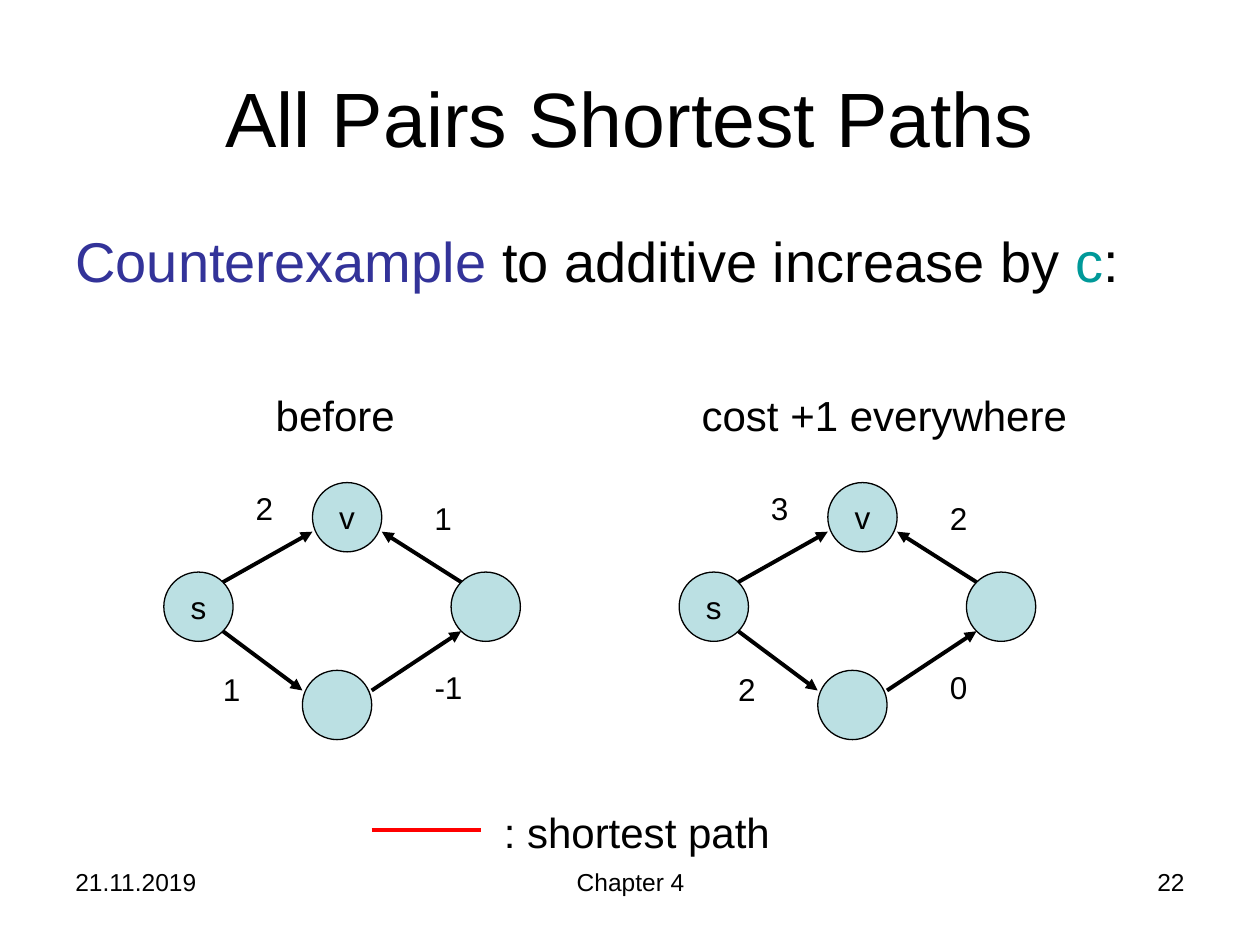
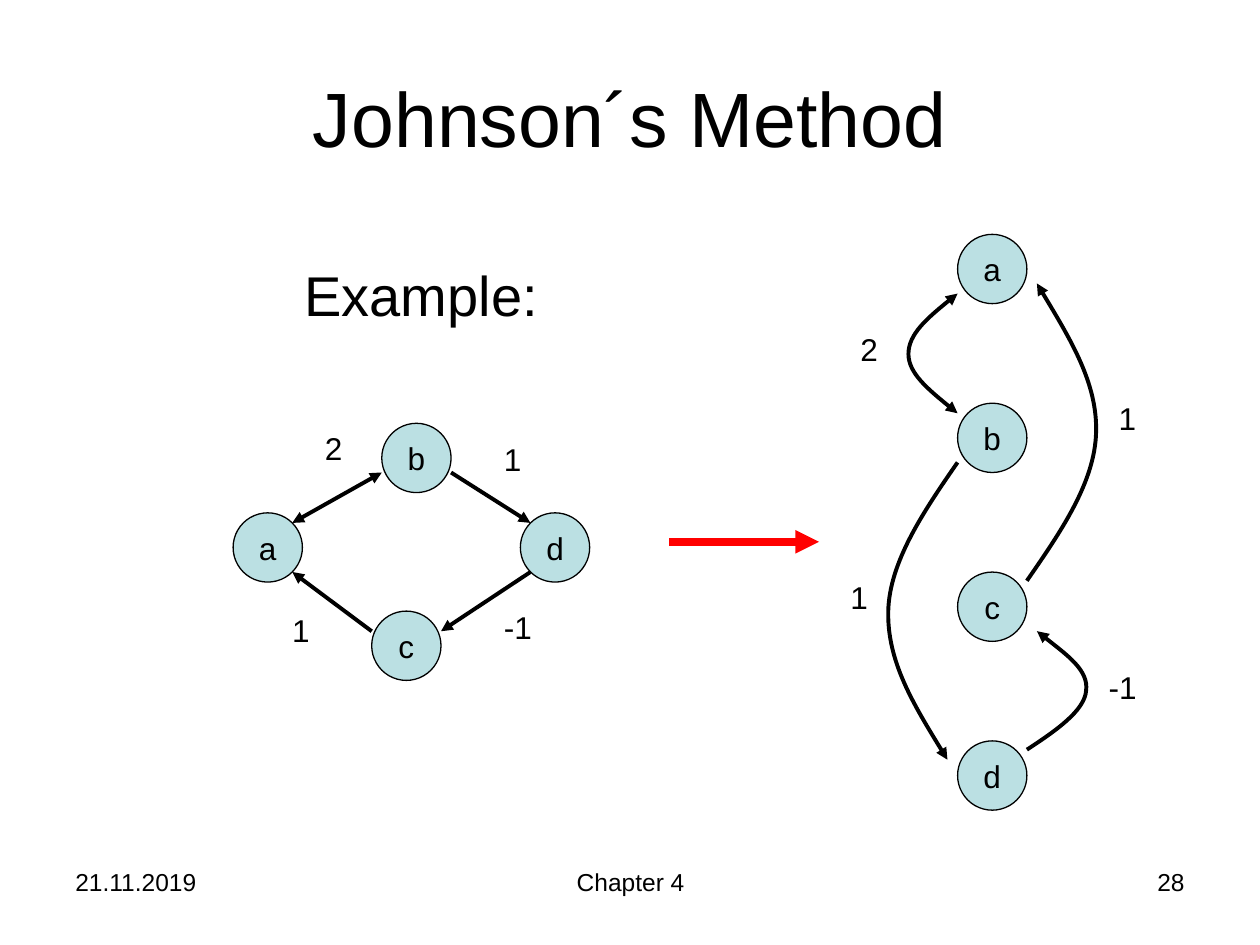
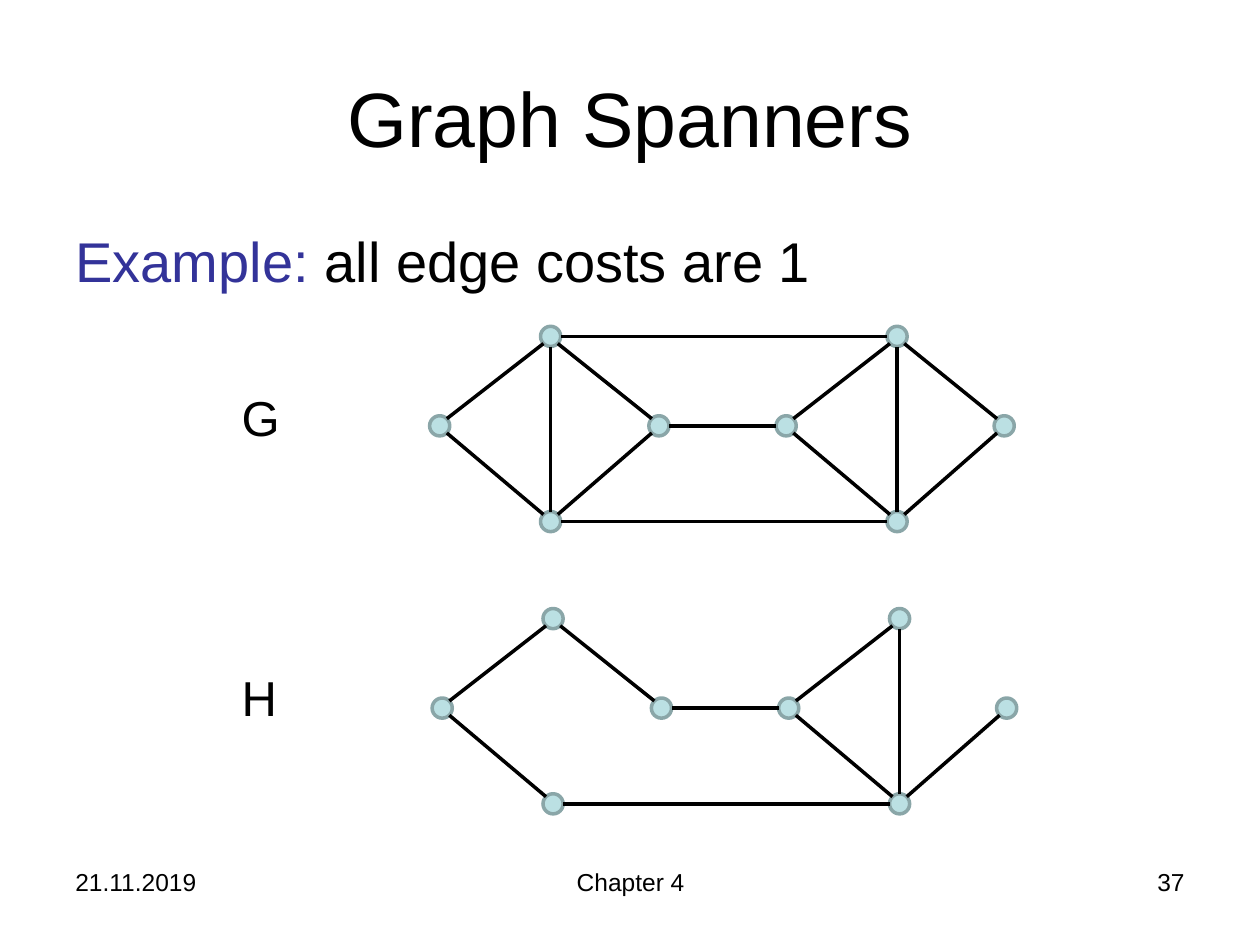
from pptx import Presentation
from pptx.dml.color import RGBColor
from pptx.enum.shapes import MSO_CONNECTOR, MSO_SHAPE
from pptx.enum.text import MSO_ANCHOR, PP_ALIGN
from pptx.oxml.ns import qn
from pptx.oxml.xmlchemy import OxmlElement
from pptx.util import Inches, Pt

# Shared style
FONT = "Arial"
BLACK, RED, INDIGO, TEAL = "000000", "FF0000", "333399", "009999"
NODE_FILL, DOT_LINE = "BBE0E3", "8AA6A8"
NODE = 0.55
DOT = 0.16


def rgb(hex_color):
    return RGBColor.from_string(hex_color)


def style_runs(p, size, colors=(BLACK,), align=None):
    p.alignment = align
    for r, color in zip(p.runs, colors):
        r.font.name, r.font.size = FONT, Pt(size)
        r.font.color.rgb = rgb(color)


def add_text(s, x, y, w, h, parts, size, align=None, wrap=False):
    """Text box with one paragraph made of (text, colour) parts."""
    tf = s.shapes.add_textbox(*map(Inches, (x, y, w, h))).text_frame
    tf.word_wrap = wrap
    p = tf.paragraphs[0]
    for text, _ in parts:
        p.add_run().text = text
    style_runs(p, size, [color for _, color in parts], align)


def add_label(s, x, y, text):
    add_text(s, x, y, 0.42 if len(text) > 1 else 0.34, 0.4, [(text, BLACK)], 18)


def add_circle(s, x, y, size, line_color, line_width, text=""):
    sp = s.shapes.add_shape(MSO_SHAPE.OVAL, *map(Inches, (x, y, size, size)))
    sp.shadow.inherit = False
    sp.fill.solid()
    sp.fill.fore_color.rgb = rgb(NODE_FILL)
    sp.line.color.rgb = rgb(line_color)
    sp.line.width = Pt(line_width)
    if text:
        tf = sp.text_frame
        tf.text = text
        tf.word_wrap = False
        tf.vertical_anchor = MSO_ANCHOR.MIDDLE
        style_runs(tf.paragraphs[0], 18, align=PP_ALIGN.CENTER)


def add_node(s, x, y, text):
    add_circle(s, x, y, NODE, BLACK, 0.75, text)


def style_line(sp, color, width, arrows):
    """arrows: '<' puts a head at the start, '>' one at the end."""
    sp.line.color.rgb = rgb(color)
    sp.line.width = Pt(width)
    ln = sp.element.spPr.find(qn("a:ln"))
    for mark, tag in (("<", "a:headEnd"), (">", "a:tailEnd")):
        if mark in arrows:
            end = OxmlElement(tag)
            end.set("type", "triangle")
            ln.append(end)


def add_line(s, start, end, color=BLACK, width=2.25, arrows=""):
    line = s.shapes.add_connector(MSO_CONNECTOR.STRAIGHT, *map(Inches, (*start, *end)))
    style_line(line, color, width, arrows)
    line.element.spPr.append(OxmlElement("a:effectLst"))


def add_curve(s, points, arrows):
    """Bézier curve: a start point, then three points for each segment."""
    emu = [(Inches(x), Inches(y)) for x, y in points]
    builder = s.shapes.build_freeform(*emu[0])
    builder.add_line_segments(emu[1:], close=False)
    sp = builder.convert_to_shape()
    sp.shadow.inherit = False
    sp.fill.background()
    style_line(sp, BLACK, 2.25, arrows)
    # Turn each three straight segments into one cubic segment
    path = sp.element.spPr.find(".//" + qn("a:path"))
    lines = path.findall(qn("a:lnTo"))
    for i in range(0, len(lines), 3):
        cubic = OxmlElement("a:cubicBezTo")
        for line in lines[i:i + 3]:
            cubic.append(line[0])
            path.remove(line)
        path.append(cubic)


def new_slide(prs, title, number):
    s = prs.slides.add_slide(prs.slide_layouts[5])
    sp = s.shapes.title
    sp.left, sp.top, sp.width, sp.height = map(Inches, (0.5, 0.3, 9, 1.25))
    tf = sp.text_frame
    tf.text = title
    tf.vertical_anchor = MSO_ANCHOR.MIDDLE
    style_runs(tf.paragraphs[0], 44, align=PP_ALIGN.CENTER)
    # Footer
    for x, w, text, align in ((0.5, 2.33, "21.11.2019", PP_ALIGN.LEFT),
                              (3.42, 3.17, "Chapter 4", PP_ALIGN.CENTER),
                              (7.17, 2.33, str(number), PP_ALIGN.RIGHT)):
        add_text(s, x, 6.83, w, 0.52, [(text, BLACK)], 14, align, wrap=True)
    return s


def add_body(s, parts):
    add_text(s, 0.5, 1.75, 9, 4.95, parts, 32, wrap=True)


# Four-node graph; nodes and edges are relative to its top left corner
DIAMOND_NODES = [(0, 0.71), (1.18, 0), (2.28, 0.71), (1.1, 1.49)]
DIAMOND_EDGES = [  # start, end, cost label
    ((0.47, 0.79), (1.18, 0.39), (0.63, 0)),
    ((0.47, 1.18), (1.1, 1.65), (0.37, 1.44)),
    ((1.65, 1.65), (2.36, 1.18), (2.05, 1.42)),
    ((2.36, 0.79), (1.73, 0.39), (2.05, 0.08)),
]


def add_diamond(s, x, y, names, costs, arrows):
    def at(point):
        return x + point[0], y + point[1]

    for point, name in zip(DIAMOND_NODES, names):
        add_node(s, *at(point), name)
    for (start, end, label), cost, arrow in zip(DIAMOND_EDGES, costs, arrows):
        add_line(s, at(start), at(end), arrows=arrow)
        add_label(s, *at(label), cost)


# Spanner graph; dot centres are relative to the first dot's column and top row
DOTS = [(0, 0.71), (0.88, 0), (0.88, 1.47), (1.74, 0.71),
        (2.75, 0.71), (3.63, 0), (3.63, 1.47), (4.48, 0.71)]
SPANNER_EDGES = [(1, 0), (3, 1), (2, 0), (4, 3), (5, 4), (6, 4), (5, 6), (7, 6), (6, 2)]
G_EDGES = SPANNER_EDGES + [(3, 2), (1, 2), (7, 5), (5, 1)]


def sign(value):
    return (value > 0) - (value < 0)


def add_dot_graph(s, x, y, edges):
    r = DOT / 2
    centres = [(x + dx, y + dy) for dx, dy in DOTS]
    for cx, cy in centres:
        add_circle(s, cx - r, cy - r, DOT, DOT_LINE, 2)
    for i, j in edges:
        (x1, y1), (x2, y2) = centres[i], centres[j]
        sx, sy = sign(x2 - x1), sign(y2 - y1)
        reach = r * (0.71 if sx and sy else 1)  # edges meet the rim of the dots
        add_line(s, (x1 + sx * reach, y1 + sy * reach),
                 (x2 - sx * reach, y2 - sy * reach), width=2)


# Nodes in a column, joined by curves
COLUMN_CURVES = [  # points, arrows, cost, label; relative to the first node
    ([(0, 1.42), (-0.2, 1.26), (-0.39, 1.1), (-0.39, 0.95),
      (-0.39, 0.79), (-0.2, 0.63), (0, 0.47)], "<>", "2", (-0.87, 0.71)),
    ([(0, 1.81), (-0.27, 2.2), (-0.54, 2.6), (-0.55, 2.99),
      (-0.56, 3.39), (-0.32, 3.78), (-0.08, 4.17)], ">", "1", (-0.95, 2.68)),
    ([(0.55, 4.09), (0.78, 3.94), (1.01, 3.78), (1.02, 3.62),
      (1.04, 3.46), (0.83, 3.31), (0.63, 3.15)], ">", "-1", (1.1, 3.39)),
    ([(0.55, 2.75), (0.82, 2.36), (1.09, 1.97), (1.1, 1.57),
      (1.11, 1.18), (0.87, 0.79), (0.63, 0.39)], ">", "1", (1.18, 1.26)),
]


def add_column(s, x, y, names, step=1.34):
    for i, name in enumerate(names):
        add_node(s, x, y + i * step, name)
    for points, arrows, cost, (dx, dy) in COLUMN_CURVES:
        add_curve(s, [(x + px, y + py) for px, py in points], arrows)
        add_label(s, x + dx, y + dy, cost)


# Slides
def shortest_paths_slide(prs):
    s = new_slide(prs, "All Pairs Shortest Paths", 22)
    add_body(s, [("Counterexample", INDIGO), (" to additive increase by ", BLACK),
                 ("c", TEAL), (":", BLACK)])
    for heading, hx, w, x, costs in (
            ("before", 2.09, 1.16, 1.3, ("2", "1", "-1", "1")),
            ("cost +1 everywhere", 5.47, 3.13, 5.39, ("3", "2", "0", "2"))):
        add_text(s, hx, 3.04, w, 0.5, [(heading, BLACK)], 24)
        add_diamond(s, x, 3.83, ("s", "v", "", ""), costs, ">>>>")
    # Legend
    add_line(s, (2.95, 6.59), (3.82, 6.59), RED)
    add_text(s, 3.9, 6.35, 2.33, 0.5, [(": shortest path", BLACK)], 24)


def johnson_slide(prs):
    s = new_slide(prs, "Johnson´s Method", 28)
    add_text(s, 2.31, 2.02, 2.07, 0.64, [("Example:", BLACK)], 32, PP_ALIGN.CENTER)
    add_diamond(s, 1.85, 3.36, "abdc", ("2", "1", "-1", "1"), ("<>", "<", "<", "<"))
    add_line(s, (5.31, 4.3), (6.5, 4.3), RED, 4.5, ">")
    add_column(s, 7.6, 1.86, "abcd")


def spanners_slide(prs):
    s = new_slide(prs, "Graph Spanners", 37)
    add_body(s, [("Example: ", INDIGO), ("all edge costs are 1", BLACK)])
    for name, label_y, x, y, edges in (("G", 3.03, 3.49, 2.67, G_EDGES),
                                       ("H", 5.25, 3.51, 4.91, SPANNER_EDGES)):
        add_dot_graph(s, x, y, edges)
        add_text(s, 1.82, label_y, 0.5, 0.57, [(name, BLACK)], 28)


def main():
    prs = Presentation()
    prs.slide_width, prs.slide_height = Inches(10), Inches(7.5)
    shortest_paths_slide(prs)
    johnson_slide(prs)
    spanners_slide(prs)
    prs.save("out.pptx")


if __name__ == "__main__":
    main()
